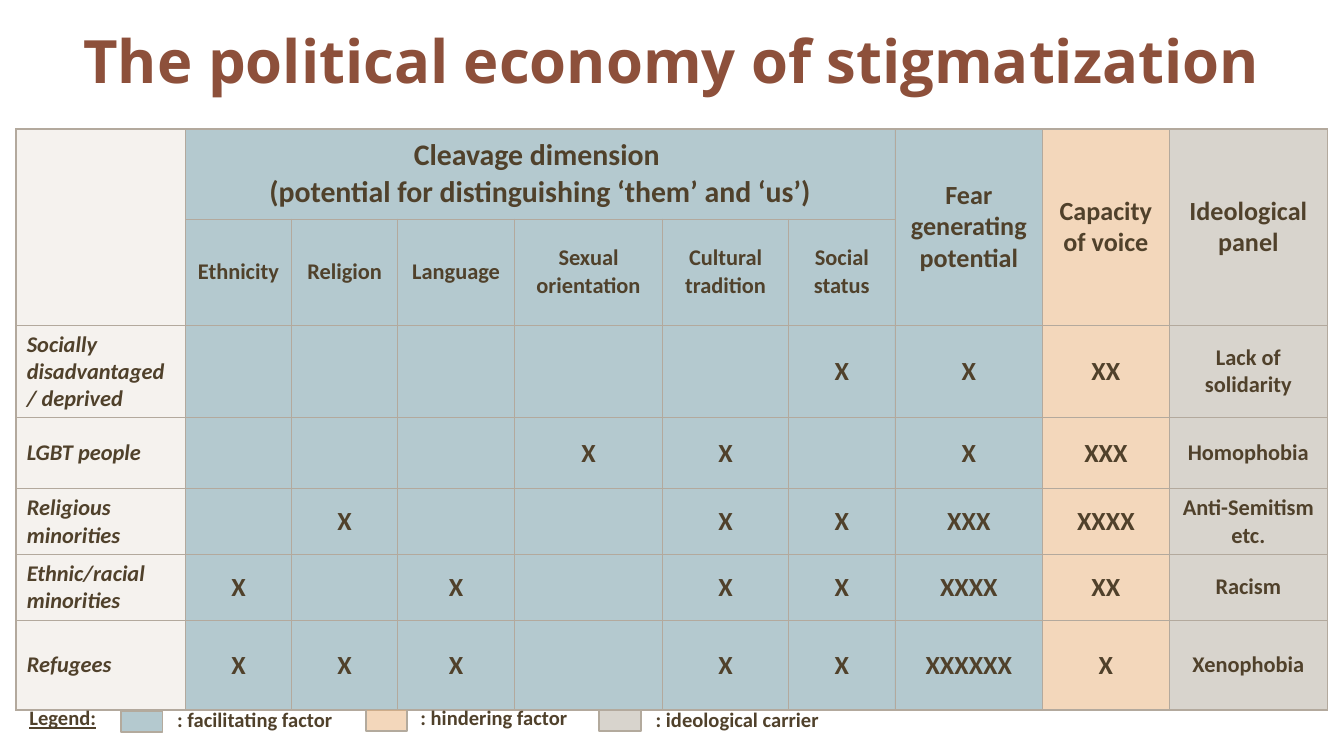
"""Build a slide with a table on the political economy of stigmatization."""
from lxml import etree
from pptx import Presentation
from pptx.dml.color import RGBColor
from pptx.enum.shapes import MSO_SHAPE
from pptx.enum.text import MSO_ANCHOR, PP_ALIGN
from pptx.oxml.ns import qn
from pptx.util import Inches, Pt

CENTER, LEFT = PP_ALIGN.CENTER, PP_ALIGN.LEFT
MIDDLE, TOP = MSO_ANCHOR.MIDDLE, MSO_ANCHOR.TOP
RECTANGLE = MSO_SHAPE.RECTANGLE

TITLE_COLOR = RGBColor(0x8D, 0x50, 0x3B)
TEXT_COLOR = RGBColor(0x50, 0x41, 0x2B)
GROUP_COLOR = RGBColor(0xEF, 0xEA, 0xE4)
FACILITATING = RGBColor(0x6B, 0x95, 0xA1)
HINDERING = RGBColor(0xE9, 0xB1, 0x78)
IDEOLOGICAL = RGBColor(0xB3, 0xAA, 0x9D)
BORDER = RGBColor(0xB3, 0xA9, 0x9D)

TITLE = "The political economy of stigmatization"
CLEAVAGE = "Cleavage dimension \n(potential for distinguishing ‘them’ and ‘us’)"
ROWS = [
    ["", CLEAVAGE, "", "", "", "", "",
     "Fear generating potential", "Capacity of voice", "Ideological panel"],
    ["", "Ethnicity", "Religion", "Language", "Sexual orientation",
     "Cultural tradition", "Social status", "", "", ""],
    ["Socially disadvantaged / deprived", "", "", "", "", "", "X", "X", "XX", "Lack of solidarity"],
    ["LGBT people", "", "", "", "X", "X", "", "X", "XXX", "Homophobia"],
    ["Religious minorities", "", "X", "", "", "X", "X", "XXX", "XXXX", "Anti-Semitism etc."],
    ["Ethnic/racial minorities", "X", "", "X", "", "X", "X", "XXXX", "XX", "Racism"],
    ["Refugees", "X", "X", "X", "", "X", "X", "XXXXXX", "X", "Xenophobia"],
]
COLUMN_WIDTHS = [1.26, 0.79, 0.79, 0.87, 1.1, 0.94, 0.79, 1.1, 0.94, 1.18]
ROW_HEIGHTS = [0.67, 0.57, 0.47, 0.53, 0.32, 0.32, 0.67]
COLUMN_COLORS = [GROUP_COLOR] + [FACILITATING] * 7 + [HINDERING, IDEOLOGICAL]
MERGES = [((0, 0), (1, 0)), ((0, 1), (0, 6))] + [((0, c), (1, c)) for c in (7, 8, 9)]
CELL_MARGIN = Pt(3.2)
LEGEND = [
    (": facilitating factor", FACILITATING, 0.9, 5.29, 1.22, 5.21, 1.5),
    (": hindering factor", HINDERING, 2.72, 5.28, 3.03, 5.2, 1.33),
    (": ideological carrier", IDEOLOGICAL, 4.46, 5.28, 4.78, 5.21, 1.48),
]


def fill_translucent(fill, properties, color, opacity):
    fill.solid()
    fill.fore_color.rgb = color
    for color_element in properties.iter(qn("a:srgbClr")):
        etree.SubElement(color_element, qn("a:alpha"), val=str(opacity * 1000))


def format_text(text_frame, size, color=TEXT_COLOR, font="Calibri", align=LEFT,
                italic=False, underline=False):
    for paragraph in text_frame.paragraphs:
        paragraph.alignment = align
        for run in paragraph.runs:
            run.font.name = font
            run.font.size = Pt(size)
            run.font.bold = True
            run.font.italic = italic
            run.font.underline = underline
            run.font.color.rgb = color


def add_label(slide, text, left, top, width, height, size, **style):
    text_frame = slide.shapes.add_textbox(
        Inches(left), Inches(top), Inches(width), Inches(height)).text_frame
    text_frame.word_wrap = True
    text_frame.vertical_anchor = TOP
    text_frame.text = text
    format_text(text_frame, size, **style)
    return text_frame


def set_borders(properties, row, column):
    outer = [column == 0, column == len(COLUMN_WIDTHS) - 1,
             row == 0, row == len(ROW_HEIGHTS) - 1]
    for index, (side, is_outer) in enumerate(zip("LRTB", outer)):
        line = etree.Element(qn(f"a:ln{side}"), w=str(Pt(1 if is_outer else 0.5)))
        solid = etree.SubElement(line, qn("a:solidFill"))
        etree.SubElement(solid, qn("a:srgbClr"), val=str(BORDER))
        properties.insert(index, line)


def text_size(row, column):
    if row == 0:
        return 16 if column == 1 else 14
    return 12 if row == 1 or column in (0, 9) else 14


def add_factor_table(slide):
    table = slide.shapes.add_table(
        len(ROWS), len(COLUMN_WIDTHS), Inches(0.12), Inches(0.96),
        Inches(sum(COLUMN_WIDTHS)), Inches(4.08)).table
    table.first_row = table.horz_banding = False
    for column, width in zip(table.columns, COLUMN_WIDTHS):
        column.width = Inches(width)
    for row, height in zip(table.rows, ROW_HEIGHTS):
        row.height = Inches(height)
    for start, end in MERGES:
        table.cell(*start).merge(table.cell(*end))
    for r, texts in enumerate(ROWS):
        for c, text in enumerate(texts):
            cell = table.cell(r, c)
            is_group = c == 0
            cell.vertical_anchor = MIDDLE
            cell.margin_left = cell.margin_right = Inches(0.08) if is_group else CELL_MARGIN
            cell.margin_top = cell.margin_bottom = CELL_MARGIN
            if text:
                cell.text_frame.text = text
                format_text(cell.text_frame, text_size(r, c), italic=is_group,
                            align=LEFT if is_group else CENTER)
            properties = cell._tc.get_or_add_tcPr()
            fill_translucent(cell.fill, properties, COLUMN_COLORS[c], 60 if is_group else 50)
            set_borders(properties, r, c)


def add_legend(slide):
    add_label(slide, "Legend:", 0.12, 5.2, 0.71, 0.29, 11, underline=True)
    for text, color, swatch_left, swatch_top, left, top, width in LEGEND:
        swatch = slide.shapes.add_shape(
            RECTANGLE, Inches(swatch_left), Inches(swatch_top), Inches(0.31), Inches(0.16))
        swatch.shadow.inherit = False
        fill_translucent(swatch.fill, swatch.element.spPr, color, 50)
        swatch.line.color.rgb = IDEOLOGICAL
        swatch.line.width = Pt(1)
        add_label(slide, text, left, top, width, 0.29, 11)


def main():
    presentation = Presentation()
    presentation.slide_width = Inches(10)
    presentation.slide_height = Inches(10) * 9 // 16
    slide = presentation.slides.add_slide(presentation.slide_layouts[6])
    title = add_label(slide, TITLE, 0.12, 0.14, 9.76, 0.87, 32,
                      color=TITLE_COLOR, font="Open Sans", align=CENTER)
    title.margin_top = Inches(0.04)
    add_factor_table(slide)
    add_legend(slide)
    presentation.save("out.pptx")


if __name__ == "__main__":
    main()
